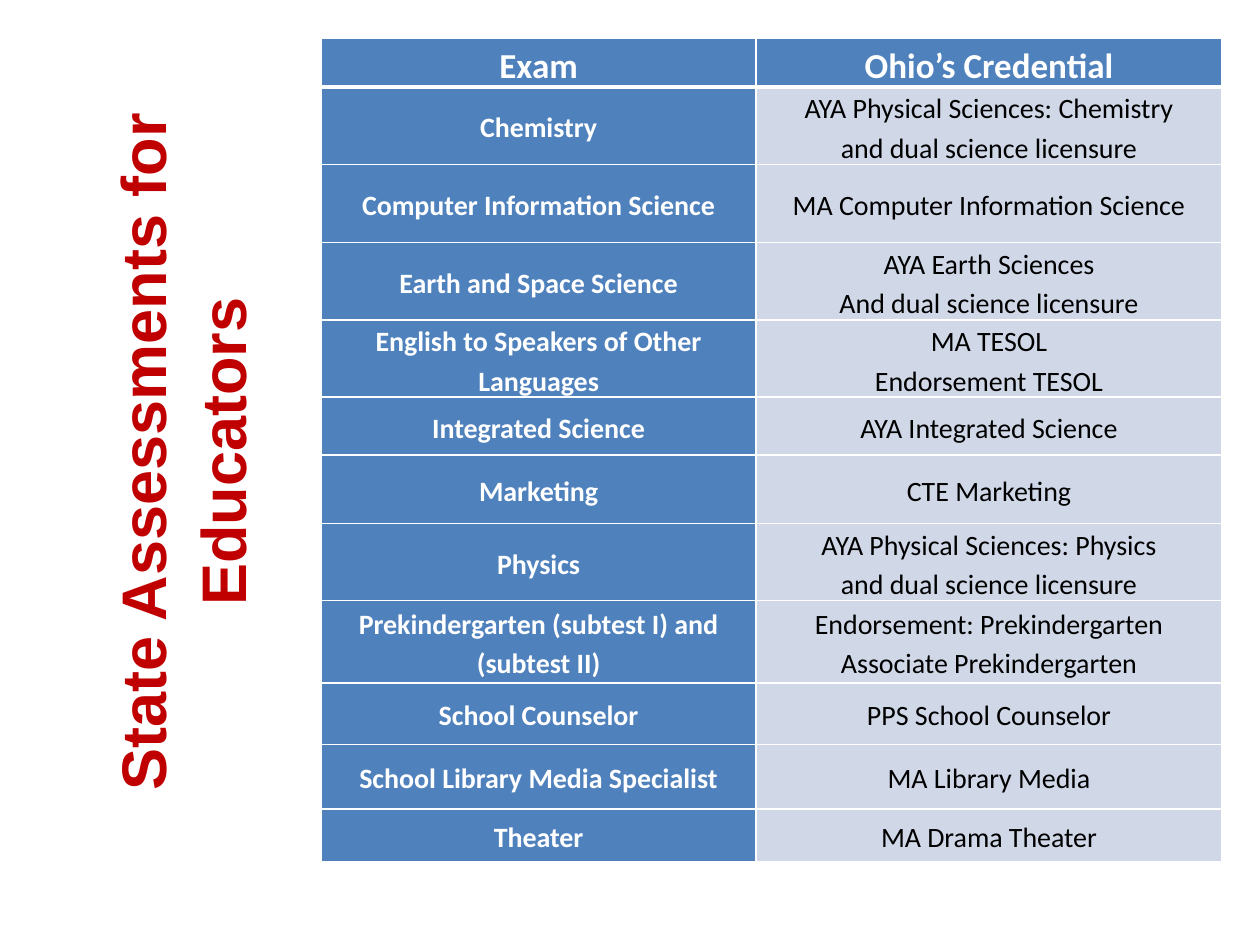
from dataclasses import dataclass

from lxml.etree import SubElement
from pptx import Presentation
from pptx.dml.color import RGBColor as RGB
from pptx.enum.text import MSO_ANCHOR as Anchor, PP_ALIGN as Align
from pptx.oxml.ns import qn
from pptx.util import Inches, Pt


@dataclass(frozen=True)
class Theme:
    title_font: str = "Arial"
    body_font: str = "Calibri"
    title_size: int = 36
    header_size: int = 20
    body_size: int = 16
    title: str = "C00000"
    accent: str = "4F81BD"
    pale: str = "D0D8E8"
    white: str = "FFFFFF"
    black: str = "000000"


THEME = Theme()
WIDTH, HEIGHT = 10, 7.5

HEADERS = ("Exam", "Ohio’s Credential")
COLUMN_WIDTHS = (3.45, 3.7)
HEADER_HEIGHT = 0.37
# Assessment, credential lines, row height in inches
ROWS = [
    ("Chemistry", ["AYA Physical Sciences: Chemistry", "and dual science licensure"], 0.61),
    ("Computer Information Science", ["MA Computer Information Science"], 0.62),
    ("Earth and Space Science", ["AYA Earth Sciences", "And dual science licensure"], 0.61),
    ("English to Speakers of Other Languages", ["MA TESOL", "Endorsement TESOL"], 0.61),
    ("Integrated Science", ["AYA Integrated Science"], 0.46),
    ("Marketing", ["CTE Marketing"], 0.54),
    ("Physics", ["AYA Physical Sciences: Physics", "and dual science licensure"], 0.61),
    ("Prekindergarten (subtest I) and (subtest II)",
     ["Endorsement: Prekindergarten", "Associate Prekindergarten"], 0.65),
    ("School Counselor", ["PPS School Counselor"], 0.49),
    ("School Library Media Specialist", ["MA Library Media"], 0.51),
    ("Theater", ["MA Drama Theater"], 0.42),
]


def style_paragraph(p, font, size, color, bold, spacing):
    p.alignment = Align.CENTER
    p.line_spacing = spacing
    p.font.name, p.font.size, p.font.bold = font, Pt(size), bold
    p.font.color.rgb = RGB.from_string(color)


def add_side_title(slide, box, text):
    """Place a title, turned to read upwards, so that it fills the upright box."""
    x, y, w, h = box
    tb = slide.shapes.add_textbox(
        Inches(x + (w - h) / 2), Inches(y + (h - w) / 2), Inches(h), Inches(w))
    tb.rotation = 270
    tf = tb.text_frame
    tf.word_wrap = True
    tf.vertical_anchor = Anchor.MIDDLE
    tf.margin_left = tf.margin_right = tf.margin_top = tf.margin_bottom = 0
    p = tf.paragraphs[0]
    p.text = text
    style_paragraph(p, THEME.title_font, THEME.title_size, THEME.title, True, 1.05)


def set_borders(cell, top=1, bottom=1):
    tc_pr = cell._tc.get_or_add_tcPr()
    widths = {"a:lnL": 1, "a:lnR": 1, "a:lnT": top, "a:lnB": bottom}
    for i, (tag, width) in enumerate(widths.items()):
        ln = SubElement(tc_pr, qn(tag), w=str(Pt(width)))
        fill = SubElement(ln, qn("a:solidFill"))
        SubElement(fill, qn("a:srgbClr"), val=THEME.white)
        tc_pr.insert(i, ln)  # borders precede the cell fill


def fill_cell(cell, lines, fill, color, size, bold, anchor, space_after=0):
    cell.fill.solid()
    cell.fill.fore_color.rgb = RGB.from_string(fill)
    cell.vertical_anchor = anchor
    cell.margin_left = cell.margin_right = Inches(0.07)
    cell.margin_top = cell.margin_bottom = 0
    tf = cell.text_frame
    tf.text = "\n".join(lines)
    for p in tf.paragraphs:
        style_paragraph(p, THEME.body_font, size, color, bold, 1.15)
        p.space_after = Pt(space_after)


def add_credential_table(slide, box):
    """Fill the box with the table, sharing it out by the column and row sizes."""
    x, y, w, h = box
    heights = [HEADER_HEIGHT] + [height for _, _, height in ROWS]
    table = slide.shapes.add_table(
        len(heights), len(HEADERS), Inches(x), Inches(y), Inches(w), Inches(h)).table
    for column, width in zip(table.columns, COLUMN_WIDTHS):
        column.width = Inches(w * width / sum(COLUMN_WIDTHS))
    for row, height in zip(table.rows, heights):
        row.height = Inches(h * height / sum(heights))

    for c, header in enumerate(HEADERS):
        cell = table.cell(0, c)
        fill_cell(cell, [header], THEME.accent, THEME.white,
                  THEME.header_size, True, Anchor.TOP)
        set_borders(cell, bottom=3)
    for r, (assessment, credentials, _) in enumerate(ROWS, start=1):
        name, credential = table.cell(r, 0), table.cell(r, 1)
        fill_cell(name, [assessment], THEME.accent, THEME.white,
                  THEME.body_size, True, Anchor.MIDDLE, space_after=10)
        fill_cell(credential, credentials, THEME.pale, THEME.black,
                  THEME.body_size, False, Anchor.MIDDLE)
        for cell in (name, credential):
            set_borders(cell, top=3 if r == 1 else 1)


def main():
    prs = Presentation()
    prs.slide_width, prs.slide_height = Inches(WIDTH), Inches(HEIGHT)
    slide = prs.slides.add_slide(prs.slide_layouts[6])
    add_side_title(slide, (0.082 * WIDTH, 0.036 * HEIGHT, 0.121 * WIDTH, 0.884 * HEIGHT),
                   "State Assessments for Educators")
    add_credential_table(
        slide, (0.255 * WIDTH, 0.041 * HEIGHT, 0.715 * WIDTH, 0.869 * HEIGHT))
    prs.save("out.pptx")


if __name__ == "__main__":
    main()
